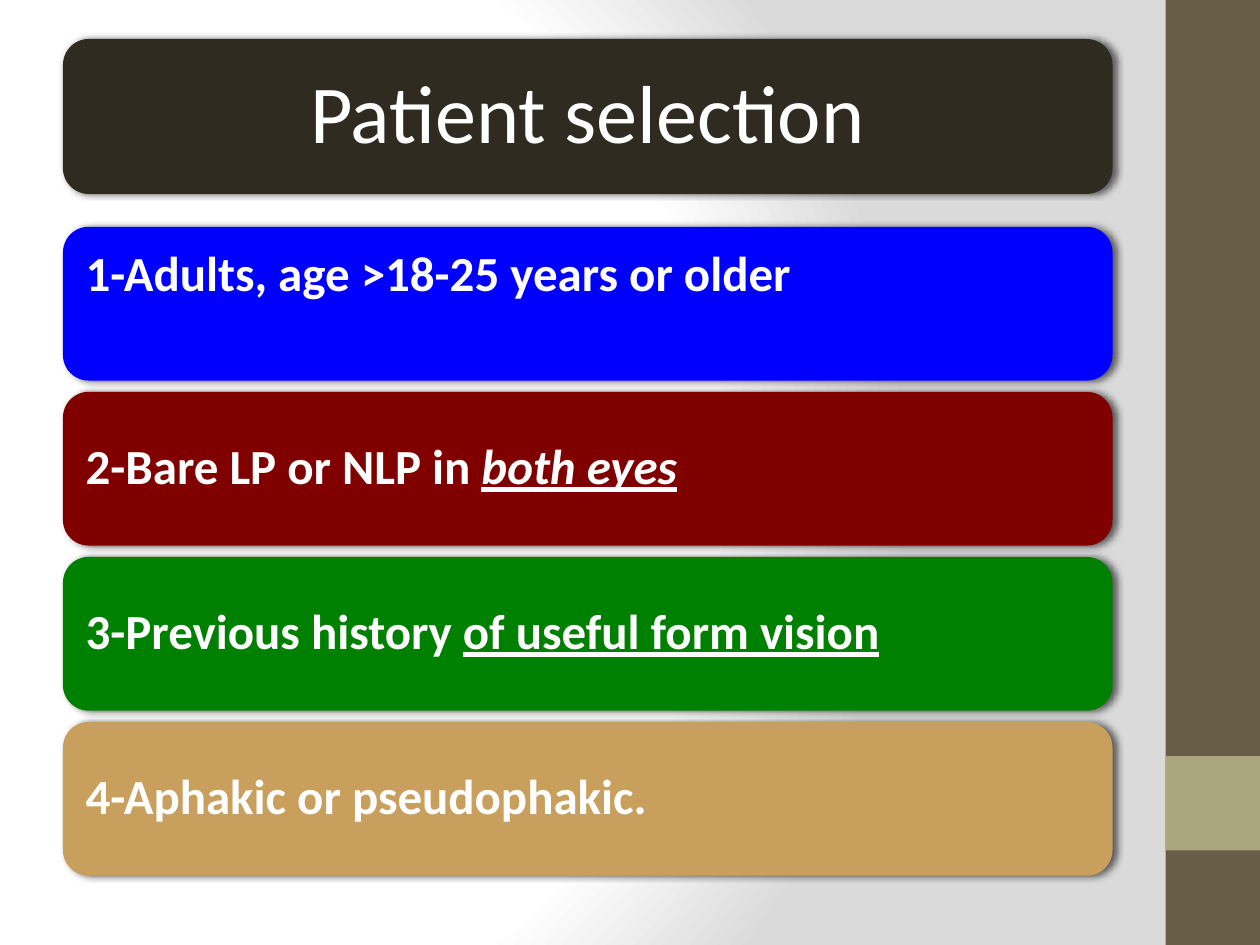
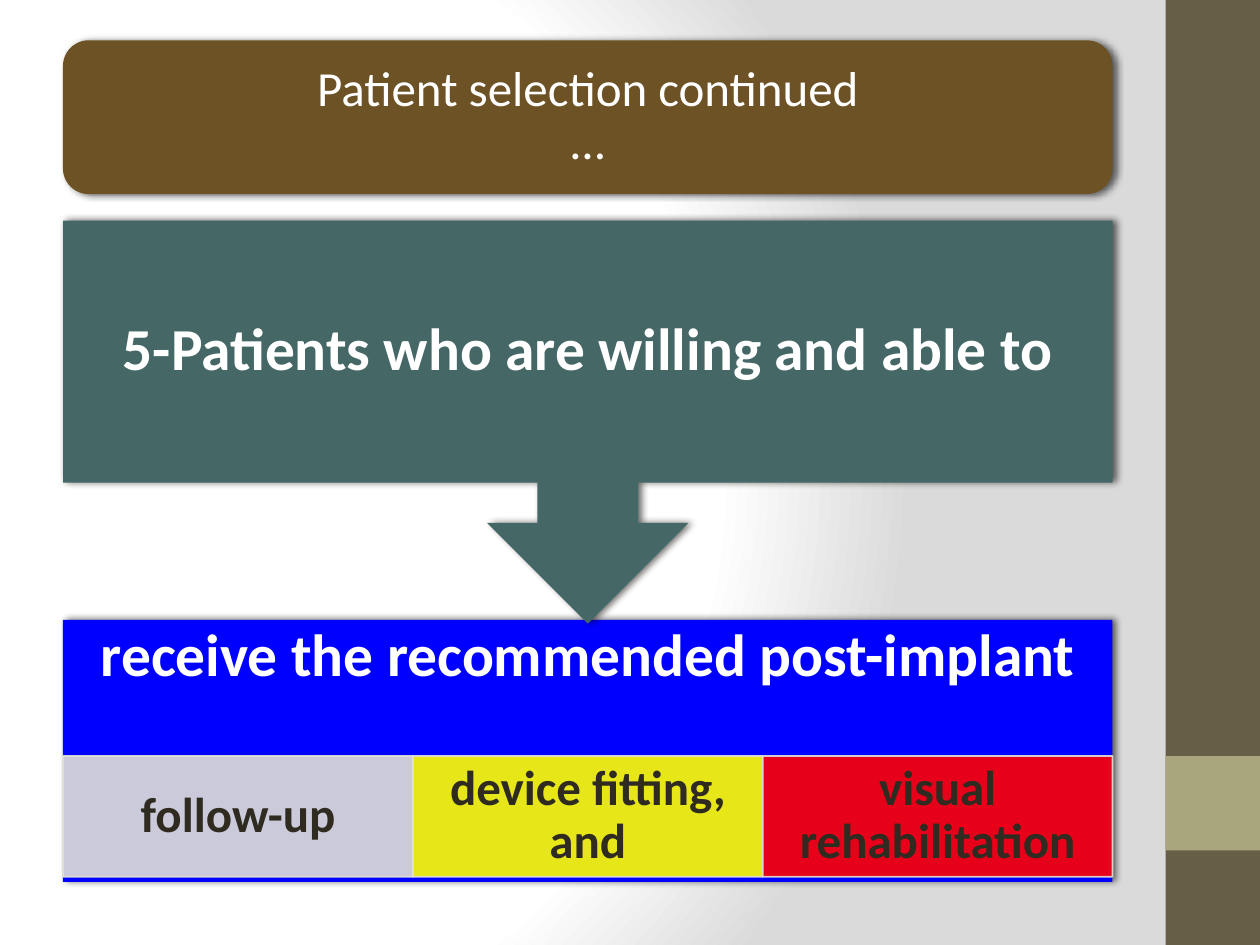
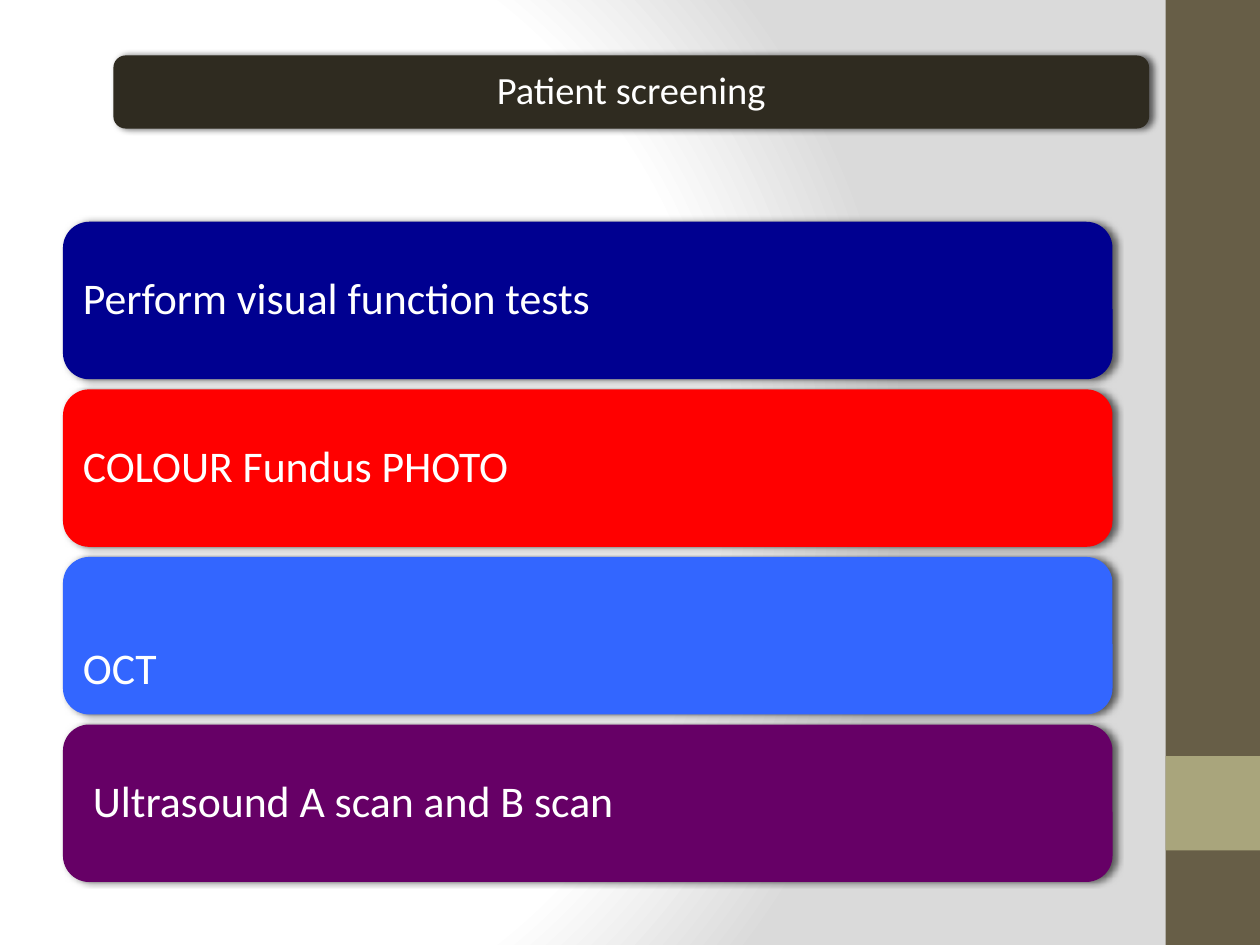
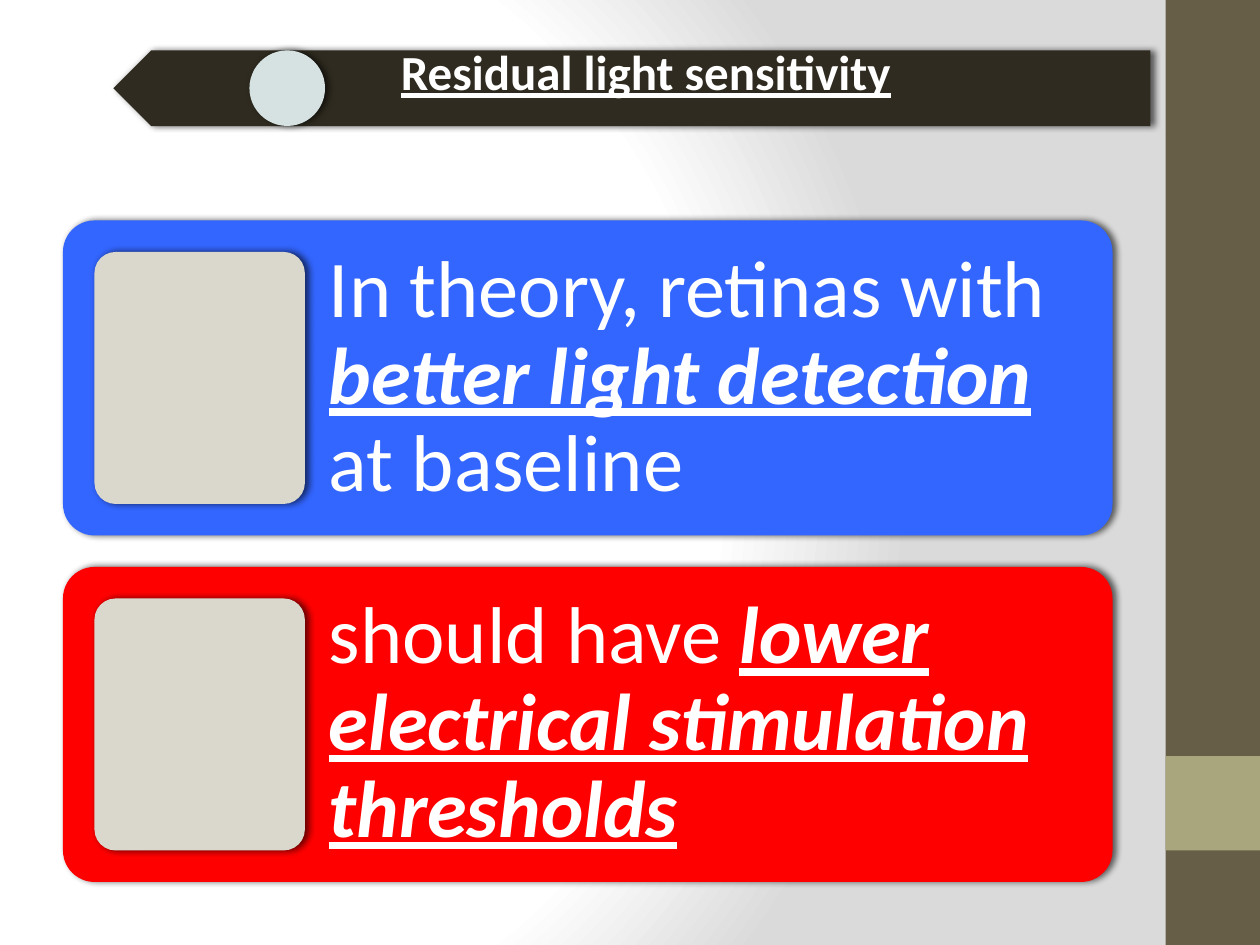
"""Build four slides on patient selection, screening and light sensitivity."""
from lxml.etree import SubElement
from pptx import Presentation
from pptx.dml.color import RGBColor
from pptx.enum.shapes import MSO_SHAPE as Preset
from pptx.enum.text import MSO_ANCHOR as Anchor, MSO_AUTO_SIZE as AutoSize, PP_ALIGN as Align
from pptx.oxml import parse_xml
from pptx.oxml.ns import nsdecls, qn
from pptx.util import Inches, Pt

COLORS = {
    "white": "FFFFFF", "silver": "DADADA", "black": "000000",
    "olive": "675E47", "sage": "A9A57C", "dark": "2F2B20",
    "blue": "0000FF", "maroon": "800000", "green": "008000", "tan": "C89F5D",
    "brown": "6D5225", "teal": "456867", "cream": "E2E1D7", "yellow": "FFFF00",
    "red": "FF0000", "navy": "000090", "azure": "3366FF", "purple": "660066",
    "mist": "D5E2E1", "stone": "DAD8CC",
}
BOLD = {"bold": True}
UNDERLINED = {"bold": True, "underline": True}
STRESSED = {"bold": True, "italic": True, "underline": True}
LEFT, WIDTH = 0.5, 8.33
CARD_MARGIN = 0.06
BREAK = ("\n", {})


class Deck:
    """Hold the shared style and the current slide."""

    font = "Calibri"
    line_spacing = 0.9

    def __init__(self):
        """Set the slide size and the shared background."""
        self.presentation = Presentation()
        self.presentation.slide_width = Inches(10)
        self.presentation.slide_height = Inches(7.5)
        self.slide = None
        self.background()

    def background(self):
        """Give the master a circular gradient."""
        master = self.presentation.slide_master
        master.background.fill.solid()
        stops = "".join(
            f'<a:gs pos="{position * 1000}"><a:srgbClr val="{COLORS[color]}"/></a:gs>'
            for position, color in ((0, "white"), (75, "white"), (100, "silver")))
        properties = master.element.find(".//" + qn("p:bgPr"))
        properties[0] = parse_xml(
            f'<a:gradFill {nsdecls("a")} rotWithShape="1"><a:gsLst>{stops}</a:gsLst>'
            '<a:path path="circle">'
            '<a:fillToRect l="20000" t="50000" r="100000" b="50000"/>'
            '</a:path></a:gradFill>')

    def bands(self):
        """Place the side bands on the master, behind its placeholders."""
        tree = self.presentation.slide_master.shapes.element
        for index, (color, top, height) in enumerate((("olive", 0, 7.5), ("sage", 6, 0.75))):
            band = self.shape(Preset.RECTANGLE, (9.25, top, 0.75, height), color, shadow=False)
            band.element.nvSpPr.cNvPr.id = 20 + index
            tree.insert(2 + index, band.element)

    def add_slide(self):
        """Start a new title-only slide."""
        first = self.slide is None
        self.slide = self.presentation.slides.add_slide(self.presentation.slide_layouts[5])
        if first:
            self.bands()

    def shape(self, preset, box, color, shadow=True, alpha=None, line=None,
              rotation=0, rounding=None):
        """Add a filled preset shape."""
        shape = self.slide.shapes.add_shape(preset, *map(Inches, box))
        shape.rotation = rotation
        if rounding is not None:
            shape.adjustments[0] = rounding
        shape.fill.solid()
        shape.fill.fore_color.rgb = RGBColor.from_string(COLORS[color])
        if line:
            shape.line.color.rgb = RGBColor.from_string(COLORS[line])
            shape.line.width = Pt(1)
        else:
            shape.line.fill.background()
        if alpha:
            for solid in shape.element.spPr.iter(qn("a:srgbClr")):
                SubElement(solid, qn("a:alpha"), val=str(alpha * 1000))
        shape.shadow.inherit = False
        if shadow:
            shape.element.spPr.find(qn("a:effectLst")).append(parse_xml(
                f'<a:outerShdw {nsdecls("a")} blurRad="{Pt(4)}" dist="{Pt(2)}" dir="0" '
                f'rotWithShape="0"><a:srgbClr val="{COLORS["black"]}">'
                '<a:alpha val="60000"/></a:srgbClr></a:outerShdw>'))
        return shape

    def fill_text(self, shape, runs, size, insets, align, anchor=Anchor.MIDDLE, color="white"):
        """Fill a shape with one paragraph of formatted runs."""
        frame = shape.text_frame
        settings = {"word_wrap": True, "auto_size": AutoSize.NONE, "vertical_anchor": anchor}
        for side, inset in zip(("left", "top", "right", "bottom"), insets):
            settings[f"margin_{side}"] = Inches(inset)
        for name, value in settings.items():
            setattr(frame, name, value)
        paragraph = frame.paragraphs[0]
        paragraph.alignment = align
        paragraph.line_spacing = self.line_spacing
        for text, extra in runs:
            if text == "\n":
                paragraph.add_line_break()
                continue
            run = paragraph.add_run()
            run.text = text
            for name, value in {"name": self.font, "size": Pt(size), **extra}.items():
                setattr(run.font, name, value)
            run.font.color.rgb = RGBColor.from_string(COLORS[color])

    def text(self, box, runs, size, insets, align=Align.LEFT, **options):
        """Add a wrapped text box."""
        self.fill_text(self.slide.shapes.add_textbox(*map(Inches, box)),
                       runs, size, insets, align, **options)

    def title(self, box, runs, size, insets, **options):
        """Move the title placeholder to the front and fill it."""
        title = self.slide.shapes.title
        for name, value in zip(("left", "top", "width", "height"), box):
            setattr(title, name, Inches(value))
        self.slide.shapes.element.append(title.element)
        self.fill_text(title, runs, size, insets, Align.CENTER, **options)

    def inner(self, box, margin=CARD_MARGIN):
        """Return the box shrunk by a margin on each side."""
        left, top, width, height = box
        return left + margin, top + margin, width - 2 * margin, height - 2 * margin

    def title_card(self, box, color, runs, size, inset, margin=CARD_MARGIN):
        """Add a rounded title card."""
        self.shape(Preset.ROUNDED_RECTANGLE, box, color)
        self.title(self.inner(box, margin), runs, size, [inset] * 4)

    def card_list(self, top, pitch, height, cards, size, inset):
        """Stack rounded text cards at an equal pitch."""
        for index, (color, runs, anchor) in enumerate(cards):
            box = (LEFT, top + index * pitch, WIDTH, height)
            self.shape(Preset.ROUNDED_RECTANGLE, box, color)
            self.text(self.inner(box), runs, size, [inset] * 4, anchor=anchor)


def selection(deck):
    """Build the patient selection slide."""
    deck.add_slide()
    deck.title_card((LEFT, 0.31, WIDTH, 1.23), "dark", [("Patient selection", {})], 47, 0.2)
    deck.card_list(1.8, 1.31, 1.22, (
        ("blue", [("1-Adults, age >18-25 years or older", BOLD)], Anchor.TOP),
        ("maroon", [("2-Bare LP or NLP in ", BOLD), ("both eyes", STRESSED)], Anchor.MIDDLE),
        ("green", [("3-Previous history ", BOLD),
                   ("of useful form vision", UNDERLINED)], Anchor.MIDDLE),
        ("tan", [("4-Aphakic or pseudophakic.", BOLD)], Anchor.MIDDLE),
    ), 28, 0.12)


def selection_continued(deck):
    """Build the slide on willing and able patients."""
    deck.add_slide()
    deck.title_card((LEFT, 0.32, WIDTH, 1.22), "brown",
                    [("Patient selection continued", {}), BREAK, ("…", {})], 28, 0.12)
    deck.shape(Preset.RECTANGLE, (LEFT, 4.92, WIDTH, 2.08), "blue")
    deck.text((LEFT, 4.92, WIDTH, 1.12), [("receive the recommended post-implant", BOLD)],
              34, (0.26, 0.04, 0.26, 0.04), Align.CENTER, anchor=Anchor.TOP)
    steps = (("cream", "follow-up"), ("yellow", "device fitting, and"),
             ("red", "visual rehabilitation"))
    step_width = WIDTH / len(steps)
    for index, (color, label) in enumerate(steps):
        box = (LEFT + index * step_width, 6, step_width, 0.96)
        deck.shape(Preset.RECTANGLE, box, color, shadow=False, alpha=90, line="cream")
        deck.text(box, [(label, BOLD)], 28, (0.22, 0.04, 0.22, 0.04),
                  Align.CENTER, color="dark")
    deck.shape(Preset.UP_ARROW_CALLOUT, (LEFT, 1.75, WIDTH, 3.2), "teal", rotation=180)
    deck.text((LEFT, 1.75, WIDTH, 2.08), [("5-Patients who are willing and able to", BOLD)],
              34, [0.26] * 4, Align.CENTER)


def screening(deck):
    """Build the patient screening slide."""
    deck.add_slide()
    deck.title_card((0.9, 0.44, 8.22, 0.58), "dark", [("Patient screening", {})],
                    22, 0.09, margin=0.03)
    deck.card_list(1.76, 1.33, 1.25, (
        ("navy", [("Perform visual function tests", {})], Anchor.MIDDLE),
        ("red", [("COLOUR Fundus PHOTO", {})], Anchor.MIDDLE),
        ("azure", [("OCT", {})], Anchor.BOTTOM),
        ("purple", [(" Ultrasound A scan and B scan", {})], Anchor.MIDDLE),
    ), 25, 0.1)


def light_sensitivity(deck):
    """Build the residual light sensitivity slide."""
    deck.add_slide()
    deck.shape(Preset.PENTAGON, (0.9, 0.4, 8.23, 0.6), "dark", rotation=180)
    deck.title((1.05, 0.38, 8.08, 0.6), [("Residual light sensitivity", UNDERLINED)],
               28, (0.26, 0, 0.19, 0), anchor=Anchor.TOP)
    deck.shape(Preset.OVAL, (1.98, 0.4, 0.6, 0.6), "mist")
    panels = (
        ("azure", [("In theory, retinas with ", {}), ("better light detection ", STRESSED),
                   ("at baseline", {})]),
        ("red", [("should have ", {}),
                 ("lower electrical stimulation thresholds", STRESSED)]),
    )
    for index, (color, runs) in enumerate(panels):
        top = 1.75 + index * 2.75
        deck.shape(Preset.ROUNDED_RECTANGLE, (LEFT, top, WIDTH, 2.5), color, rounding=0.1)
        deck.text((2.42, top, 6.42, 2.5), runs, 46, [0.19] * 4)
        deck.shape(Preset.ROUNDED_RECTANGLE, (0.75, top + 0.25, 1.67, 2), "stone", rounding=0.1)


def main():
    """Build and save the slides."""
    deck = Deck()
    for build in (selection, selection_continued, screening, light_sensitivity):
        build(deck)
    deck.presentation.save("out.pptx")


if __name__ == "__main__":
    main()
